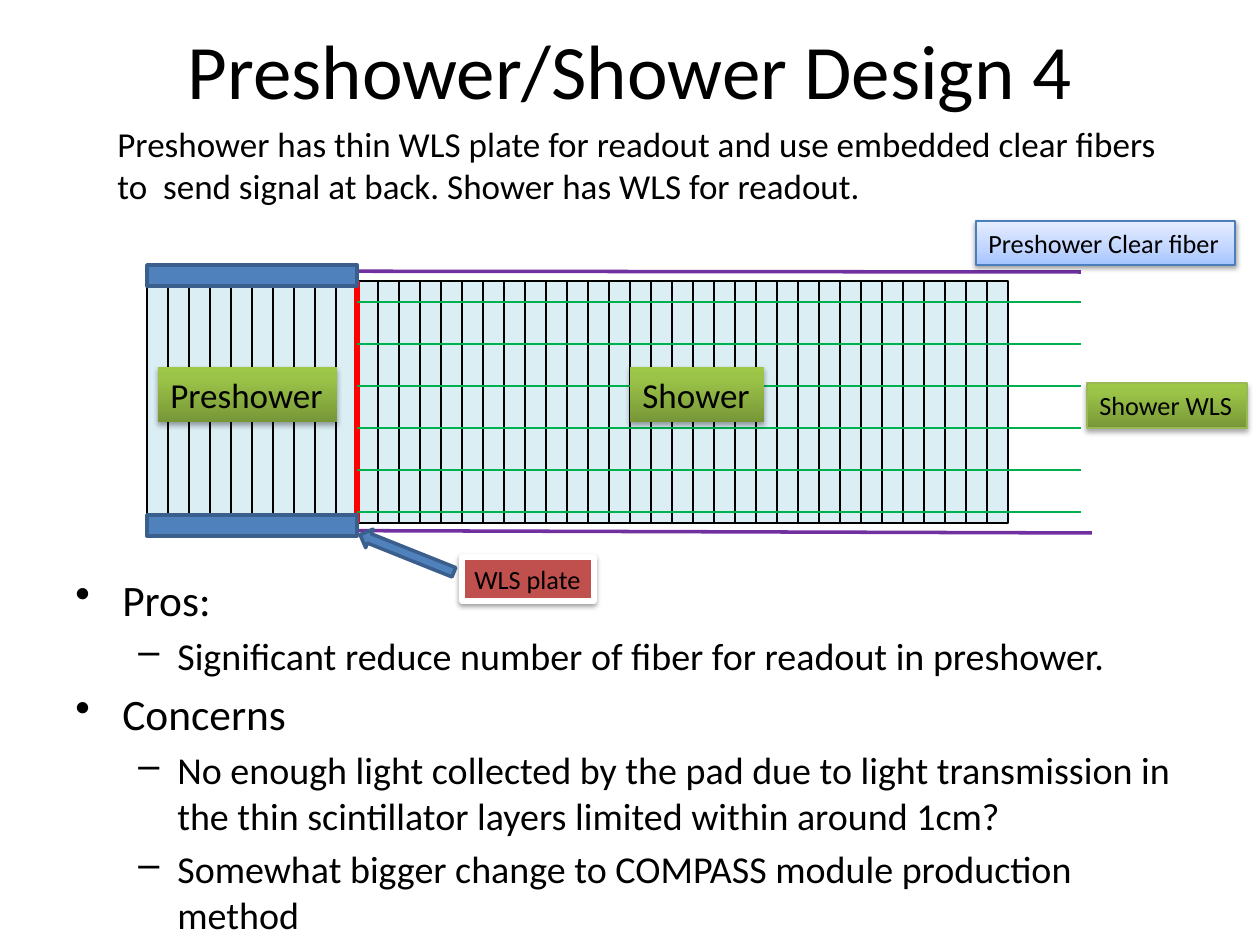
from copy import deepcopy
from dataclasses import dataclass
from typing import Optional

from pptx import Presentation
from pptx import util as u
from pptx.dml.color import RGBColor
from pptx.enum import shapes, text
from pptx.oxml.ns import qn
from lxml import etree

PX = 914400 / 126
FONT = "Calibri"
BLACK, RED, GREEN, PURPLE = "000000", "FF0000", "00B050", "7030A0"
PALE, BLUE, NAVY = "DBEEF4", "4F81BD", "3A5F8C"
LIME = ((0, "779737"), (80, "9BC348"), (100, "9DC746"))
SKY = ((0, "A4C4FF"), (35, "BFD4FF"), (100, "E6EEFF"))
BRICK = ((0, "C0504D"),)

LEFT, TOP, PITCH, HIGH = 147, 281, 21, 242
PADS, FRONT = 41, 10
SPLIT = LEFT + FRONT * PITCH


@dataclass
class Box:
    x: int
    y: int
    w: int
    h: int


@dataclass
class Label:
    words: str
    box: Box
    size: int
    stops: tuple
    edge: Optional[str] = None
    width: float = 0.75
    alpha: int = 35
    drop: float = 1.8


@dataclass
class Point:
    words: str
    level: int = 0


LABELS = [
    Label("Shower", Box(630, 367, 134, 55), 20, LIME),
    Label("Preshower", Box(158, 367, 179, 55), 20, LIME),
    Label("Shower WLS", Box(1087, 383, 160, 45), 15, LIME, "98B955"),
    Label("Preshower Clear fiber", Box(976, 221, 259, 44), 15, SKY, "4B7EBC", 0.75, 38, 1.6),
    Label("WLS plate", Box(462, 557, 132, 44), 15, BRICK, "FFFFFF", 3, 38, 1.6),
]
POINTS = [
    Point("Pros:"),
    Point("Significant reduce number of fiber for readout in preshower.", 1),
    Point("Concerns"),
    Point("No enough light collected by the pad due to light transmission in "
          "the thin scintillator layers limited within around 1cm?", 1),
    Point("Somewhat bigger change to COMPASS module production method", 1),
]
# bullet sign, font size, left margin in px, hanging indent in px
LEVELS = (("•", 24.8, 47, 47), ("–", 21.7, 102, 39))


def px(n: float) -> int:
    return round(n * PX)


def place(b: Box) -> tuple:
    return px(b.x), px(b.y), px(b.w), px(b.h)


def rgb(code: str) -> RGBColor:
    return RGBColor.from_string(code)


def style(para, size: float) -> None:
    para.font.size = u.Pt(size)
    para.font.name = FONT
    para.font.color.rgb = rgb(BLACK)


def shape(slide, box: Box, fill: str, edge: Optional[str], width: float,
          kind=shapes.MSO_SHAPE.RECTANGLE):
    s = slide.shapes.add_shape(kind, *place(box))
    s.shadow.inherit = False
    s.fill.solid()
    s.fill.fore_color.rgb = rgb(fill)
    if edge:
        s.line.color.rgb = rgb(edge)
        s.line.width = u.Pt(width)
    else:
        s.line.fill.background()
    return s


def line(slide, x1: int, y1: int, x2: int, y2: int, color: str, width: float) -> None:
    c = slide.shapes.add_connector(
        shapes.MSO_CONNECTOR.STRAIGHT, px(x1), px(y1), px(x2), px(y2))
    c.line.color.rgb = rgb(color)
    c.line.width = u.Pt(width)
    etree.SubElement(c._element.spPr, qn("a:effectLst"))


def blend(s, stops: tuple) -> None:
    """Fill with a three-stop gradient that runs from bottom to top."""
    s.fill.gradient()
    s.fill.gradient_angle = 90
    group = s._element.spPr.find(".//" + qn("a:gsLst"))
    group.append(deepcopy(group[-1]))
    for stop, (at, color) in zip(s.fill.gradient_stops, stops):
        stop.position = at / 100
        stop.color.rgb = rgb(color)


def shade(s, alpha: int, drop: float) -> None:
    """Cast a soft black shadow straight down."""
    group = s._element.spPr.find(qn("a:effectLst"))
    cast = etree.SubElement(
        group, qn("a:outerShdw"), blurRad=str(u.Pt(3.1)), dist=str(u.Pt(drop)),
        dir="5400000", rotWithShape="0")
    tint = etree.SubElement(cast, qn("a:srgbClr"), val=BLACK)
    etree.SubElement(tint, qn("a:alpha"), val=str(alpha * 1000))


def label(slide, item: Label) -> None:
    s = shape(slide, item.box, item.stops[0][1], item.edge, item.width)
    if len(item.stops) > 1:
        blend(s, item.stops)
    shade(s, item.alpha, item.drop)
    frame = s.text_frame
    frame.word_wrap = False
    frame.auto_size = text.MSO_AUTO_SIZE.SHAPE_TO_FIT_TEXT
    frame.vertical_anchor = text.MSO_ANCHOR.TOP
    para = frame.paragraphs[0]
    para.text = item.words
    para.alignment = text.PP_ALIGN.LEFT
    style(para, item.size)


def write(slide, box: Box, words: str, size: float):
    frame = slide.shapes.add_textbox(*place(box)).text_frame
    frame.word_wrap = True
    para = frame.paragraphs[0]
    para.text = words
    style(para, size)
    return frame


def bullets(slide, box: Box, points: list) -> None:
    frame = write(slide, box, "", LEVELS[0][1])
    for i, point in enumerate(points):
        para = frame.add_paragraph() if i else frame.paragraphs[0]
        sign, size, left, hang = LEVELS[point.level]
        para.text = point.words
        para.level = point.level
        para.space_before = u.Pt(round(size * 0.2, 1))
        style(para, size)
        props = para._p.get_or_add_pPr()
        props.set("marL", str(px(left)))
        props.set("indent", str(-px(hang)))
        mark = etree.Element(qn("a:buChar"), char=sign)
        props.find(qn("a:defRPr")).addprevious(mark)


def module(slide) -> None:
    """Draw the scintillator pads, the readout fibers and the WLS plates."""
    shape(slide, Box(LEFT, TOP, PADS * PITCH, HIGH), PALE, BLACK, 0.75)
    for i in range(1, PADS):
        x = LEFT + i * PITCH
        color, width = (RED, 3) if i == FRONT else (BLACK, 1)
        line(slide, x, TOP, x, TOP + HIGH, color, width)
    for i in range(6):
        y = TOP + PITCH + i * 2 * PITCH
        line(slide, SPLIT, y, 1081, y, GREEN, 1.5)
    line(slide, LEFT, 271, 1081, 272, PURPLE, 2)
    line(slide, LEFT, 530, 1092, 533, PURPLE, 2)
    for y in (265, 515):
        shape(slide, Box(LEFT, y, FRONT * PITCH, PITCH), BLUE, NAVY, 2)


def main() -> None:
    deck = Presentation()
    deck.slide_width, deck.slide_height = px(1260), px(945)
    slide = deck.slides.add_slide(deck.slide_layouts[6])
    title = write(slide, Box(63, -10, 1134, 158), "Preshower/Shower Design 4", 44)
    title.vertical_anchor = text.MSO_ANCHOR.MIDDLE
    title.paragraphs[0].alignment = text.PP_ALIGN.CENTER
    module(slide)
    write(slide, Box(105, 116, 1092, 97),
          "Preshower has thin WLS plate for readout and use embedded clear fibers "
          "to  send signal at back. Shower has WLS for readout.", 20)
    bullets(slide, Box(63, 567, 1134, 357), POINTS)
    for item in LABELS:
        label(slide, item)
    arrow = shape(slide, Box(397, 503, 20, 101), BLUE, NAVY, 2, shapes.MSO_SHAPE.UP_ARROW)
    arrow.rotation = 291.8
    deck.save("out.pptx")


if __name__ == "__main__":
    main()
